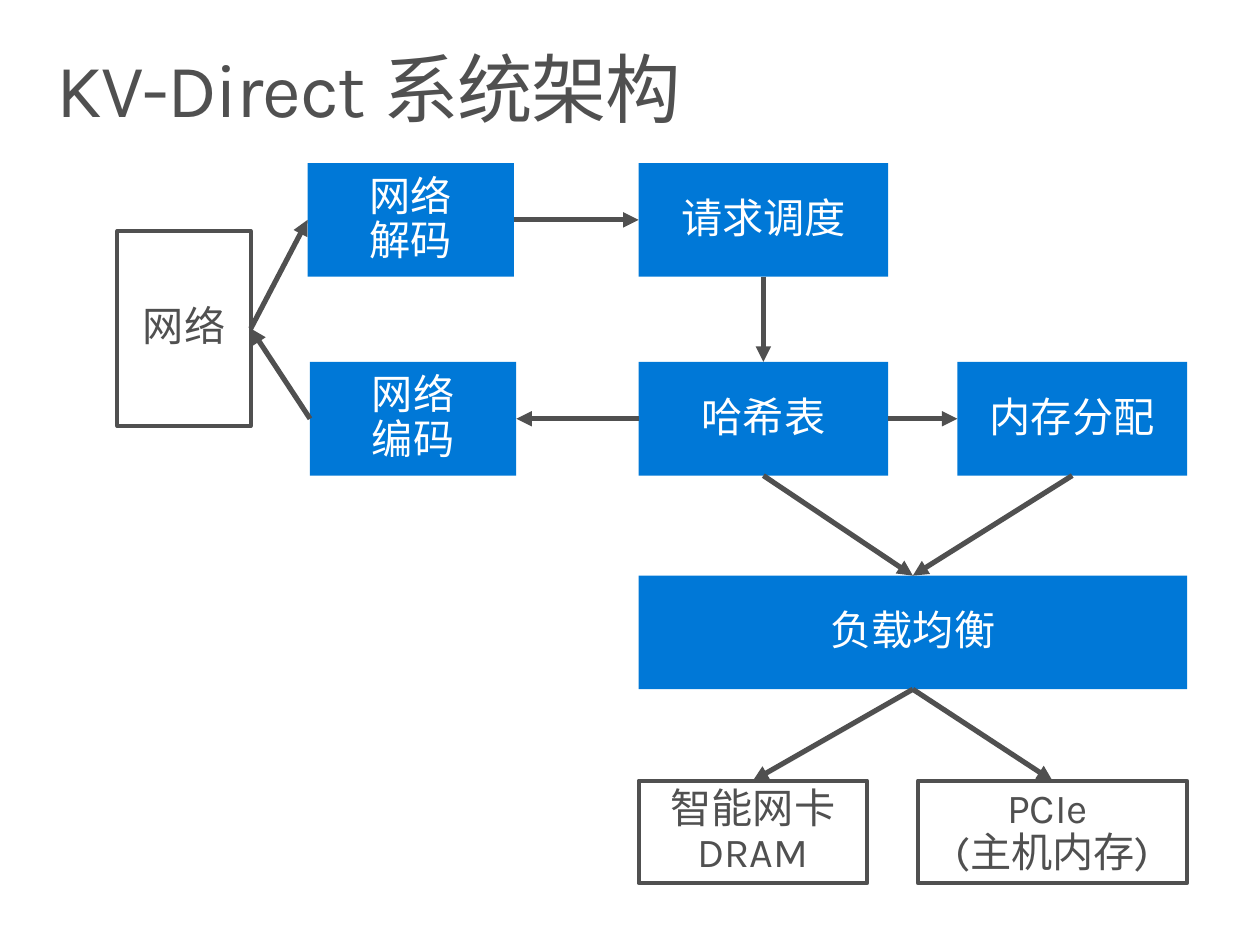
from pptx import Presentation
from pptx.dml.color import RGBColor
from pptx.enum.shapes import MSO_CONNECTOR, MSO_SHAPE
from pptx.enum.text import MSO_ANCHOR, PP_ALIGN
from pptx.oxml.ns import qn
from pptx.util import Inches, Pt
from lxml.etree import SubElement

HUES = {"ink": "505050", "blue": "0078D7", "white": "FFFFFF"}
FONT = "Karla"
TOP, LEFT, BASE, RIGHT = range(4)

deck = Presentation()
deck.slide_width, deck.slide_height = Inches(10.2), Inches(7.65)
slide = deck.slides.add_slide(deck.slide_layouts[6])


def hue(name):
    return RGBColor.from_string(HUES[name])


def style(frame, size, ink, inset, align):
    frame.word_wrap = True
    frame.margin_left = frame.margin_right = Inches(inset[0])
    frame.margin_top = frame.margin_bottom = Inches(inset[1])
    for para in frame.paragraphs:
        para.alignment = align
        para.line_spacing = 0.9
        for run in para.runs:
            run.font.size = Pt(size)
            run.font.name = FONT
            run.font.color.rgb = hue(ink)


title = slide.shapes.add_textbox(Inches(0.3), Inches(0.32), Inches(9.6), Inches(1))
title.text_frame.text = "KV-Direct 系统架构"
style(title.text_frame, 44, "ink", (0.16, 0.1), PP_ALIGN.LEFT)
title.text_frame.paragraphs[0].runs[0].font._element.set("spc", "-80")

ROWS = {
    "net": (1.87, 1.58),
    "front": (1.32, 0.92),
    "core": (2.93, 0.92),
    "load": (4.66, 0.92),
    "store": (6.32, 0.83),
}
MID, END = 5.17, 9.61
WIDE, CODE = 2.02, 1.67

BOXES = {
    "net": ("网络", "net", 0.95, 1.08, False),
    "decode": ("网络\n解码", "front", 2.49, CODE, True),
    "queue": ("请求调度", "front", MID, WIDE, True),
    "hash": ("哈希表", "core", MID, WIDE, True),
    "encode": ("网络\n编码", "core", 2.51, CODE, True),
    "alloc": ("内存分配", "core", 7.75, END - 7.75, True),
    "load": ("负载均衡", "load", MID, END - MID, True),
    "dram": ("智能网卡 DRAM", "store", MID, 1.85, False),
    "host": ("PCIe \v(主机内存)", "store", 7.43, END - 7.43, False),
}

nodes = {}
for name, (text, row, left, width, solid) in BOXES.items():
    top, height = ROWS[row]
    box = slide.shapes.add_shape(
        MSO_SHAPE.RECTANGLE, Inches(left), Inches(top), Inches(width), Inches(height)
    )
    box.shadow.inherit = False
    box.fill.solid()
    box.fill.fore_color.rgb = hue("blue" if solid else "white")
    if solid:
        box.line.fill.background()
    else:
        box.line.color.rgb = hue("ink")
        box.line.width = Pt(2.25)
    box.text_frame.text = text
    box.text_frame.vertical_anchor = MSO_ANCHOR.MIDDLE
    style(box.text_frame, 24, "white" if solid else "ink", (0.2, 0.16), PP_ALIGN.CENTER)
    nodes[name] = box

LINKS = [
    ("net", RIGHT, "decode", LEFT),
    ("decode", RIGHT, "queue", LEFT),
    ("queue", BASE, "hash", TOP),
    ("hash", LEFT, "encode", RIGHT),
    ("encode", LEFT, "net", RIGHT),
    ("hash", RIGHT, "alloc", LEFT),
    ("hash", BASE, "load", TOP),
    ("alloc", BASE, "load", TOP),
    ("load", BASE, "dram", TOP),
    ("load", BASE, "host", TOP),
]
for start, exit, goal, entry in LINKS:
    link = slide.shapes.add_connector(MSO_CONNECTOR.STRAIGHT, 0, 0, 0, 0)
    link.begin_connect(nodes[start], exit)
    link.end_connect(nodes[goal], entry)
    link.line.color.rgb = hue("ink")
    link.line.width = Pt(3)
    SubElement(link.line._get_or_add_ln(), qn("a:tailEnd"), type="triangle")
    SubElement(link._element.spPr, qn("a:effectLst"))

deck.save("out.pptx")
